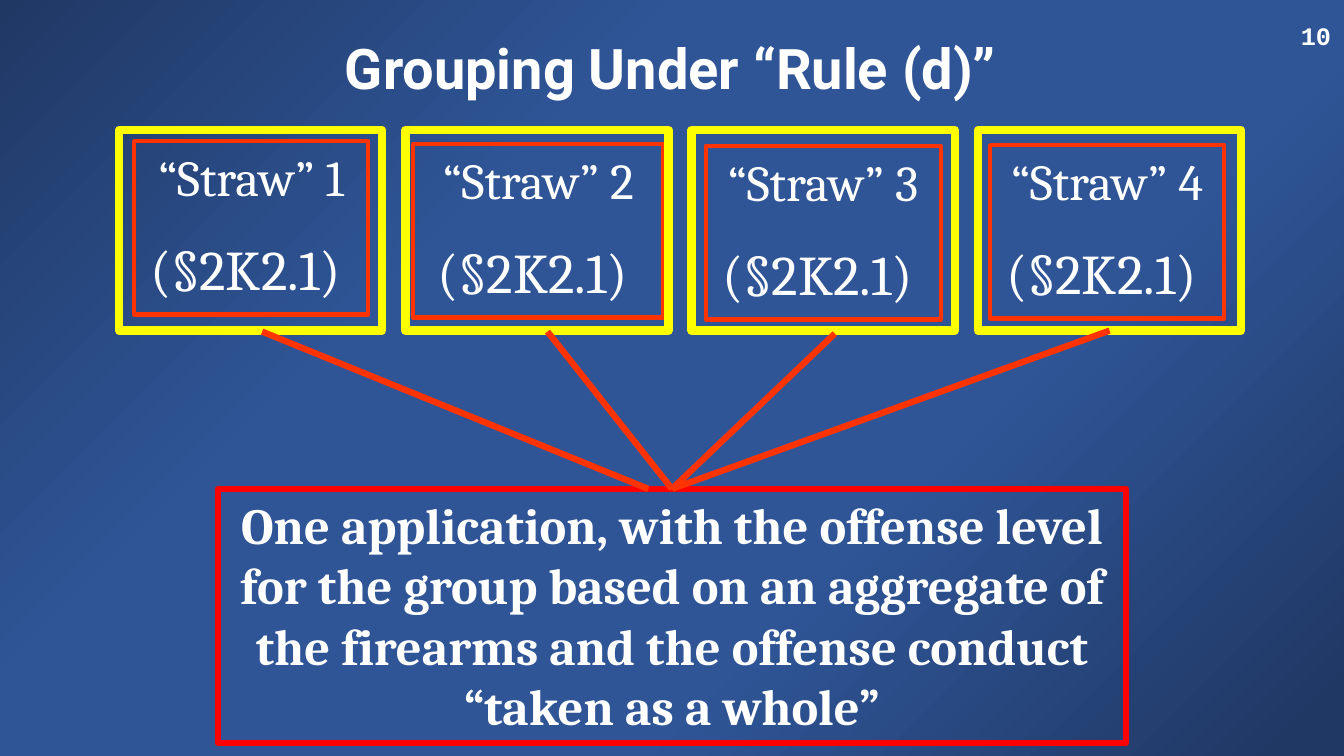
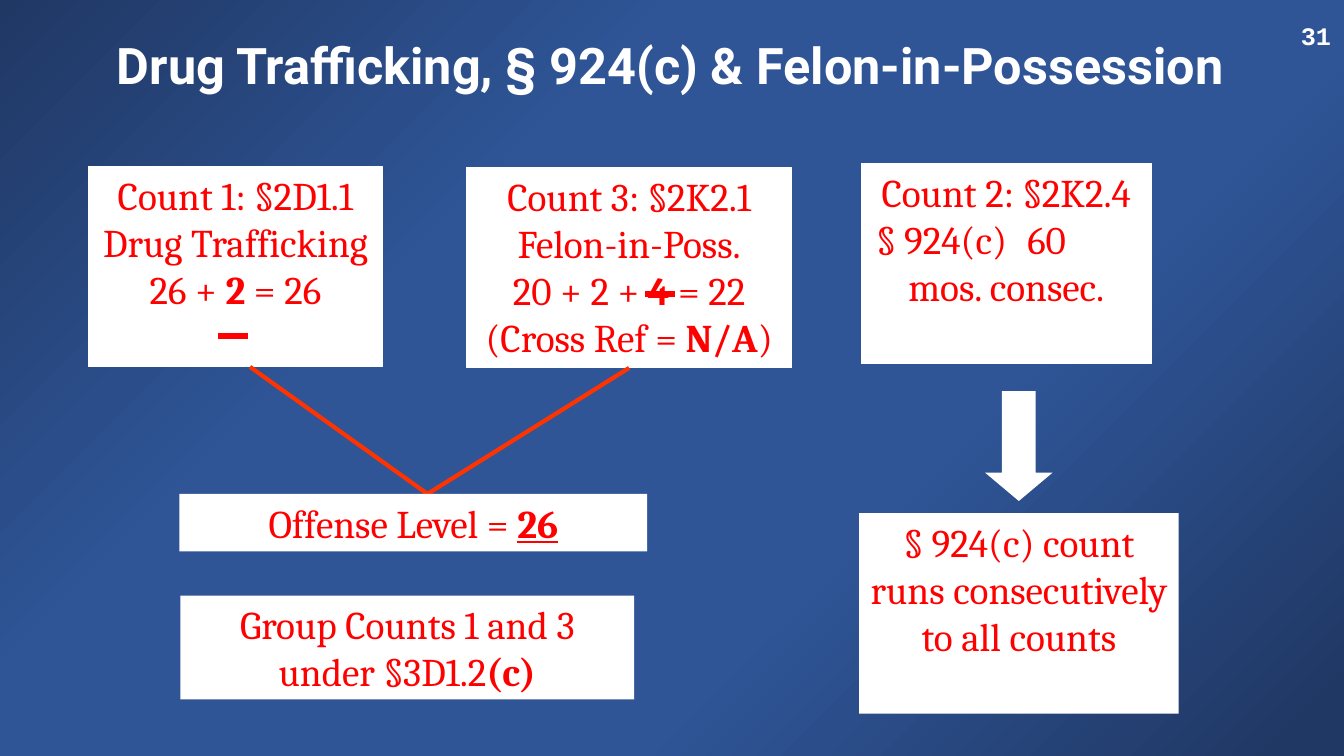
from copy import deepcopy
from dataclasses import dataclass

from lxml import etree
from pptx import Presentation
from pptx import util as u
from pptx.dml.color import RGBColor
from pptx.enum import shapes, text
from pptx.oxml.ns import qn

LEFT, CENTER, RIGHT = text.PP_ALIGN.LEFT, text.PP_ALIGN.CENTER, text.PP_ALIGN.RIGHT
RECT = shapes.MSO_SHAPE.RECTANGLE
TOP, BOTTOM = 0, 2


@dataclass(frozen=True)
class Theme:
    white: RGBColor = RGBColor(0xFF, 0xFF, 0xFF)
    red: RGBColor = RGBColor(0xFF, 0x00, 0x00)
    orange: RGBColor = RGBColor(0xFF, 0x33, 0x00)
    yellow: RGBColor = RGBColor(0xFF, 0xFF, 0x00)
    backdrop: tuple = ((0, "203864"), (33, "2F5597"), (66, "2F5597"), (97, "203864"))
    title_font: str = "Roboto"
    body_font: str = "Cambria"
    number_font: str = "Courier New"
    title: int = 40
    long_title: int = 36
    large: int = 40
    body: int = 36
    small: int = 28
    number: int = 18
    thin: float = 0.75
    medium: float = 3
    thick: float = 4.5
    frame: float = 6


T = Theme()


def set_backdrop(master):
    fill = master.background.fill
    fill.gradient()
    fill.gradient_angle = 315
    stops = fill.gradient_stops
    gs_list = master.element.find(".//" + qn("a:gsLst"))
    template = deepcopy(gs_list[0])
    for gs in list(gs_list):
        gs_list.remove(gs)
    for pos, color in T.backdrop:
        gs = deepcopy(template)
        for child in list(gs):
            gs.remove(child)
        gs.set("pos", str(pos * 1000))
        etree.SubElement(gs, qn("a:srgbClr"), val=color)
        gs_list.append(gs)


def inches(*lengths):
    return [u.Inches(n) for n in lengths]


def add_run(p, words, size, color, font=T.body_font, bold=False, underline=False):
    r = p.add_run()
    r.text = words
    r.font.name, r.font.size, r.font.color.rgb = font, u.Pt(size), color
    r.font.bold = bold
    if underline:
        r.font.underline = True


def add_lines(tf, lines, size, color):
    """Each line is a list of runs; a run is (words, options of add_run)."""
    tf.word_wrap = True
    tf.vertical_anchor = text.MSO_ANCHOR.TOP
    for i, line in enumerate(lines):
        p = tf.paragraphs[0] if i == 0 else tf.add_paragraph()
        p.alignment = CENTER
        for words, options in line:
            add_run(p, words, **{"size": size, "color": color, **options})


def add_box(s, box, fill=None, line=None, width=T.thin, kind=RECT):
    sp = s.shapes.add_shape(kind, *inches(*box))
    sp.shadow.inherit = False
    if fill is None:
        sp.fill.background()
    else:
        sp.fill.solid()
        sp.fill.fore_color.rgb = fill
    if line is None:
        sp.line.fill.background()
    else:
        sp.line.color.rgb, sp.line.width = line, u.Pt(width)
    return sp


def add_line(s, start, end, color, width):
    """An end is either a point (x, y) or a join (shape, side)."""
    points = [(0, 0) if hasattr(e[0], "shape_id") else e for e in (start, end)]
    c = s.shapes.add_connector(shapes.MSO_CONNECTOR.STRAIGHT,
                               *inches(*points[0], *points[1]))
    for e, join in ((start, c.begin_connect), (end, c.end_connect)):
        if hasattr(e[0], "shape_id"):
            join(*e)
    c.line.color.rgb, c.line.width = color, u.Pt(width)
    etree.SubElement(c.line._get_or_add_ln().getparent(), qn("a:effectLst"))


def add_slide(prs, title, number, box, size, spacing):
    s = prs.slides.add_slide(prs.slide_layouts[5])
    sp = s.shapes.title
    sp.left, sp.top, sp.width, sp.height = inches(*box)
    tf = sp.text_frame
    tf.auto_size = text.MSO_AUTO_SIZE.NONE
    tf.vertical_anchor = text.MSO_ANCHOR.TOP
    p = tf.paragraphs[0]
    p.alignment, p.line_spacing = CENTER, spacing
    add_run(p, title, size, T.white, T.title_font, bold=True)

    tf = s.shapes.add_textbox(*inches(10.3, 0.15, 3, 0.4)).text_frame
    tf.word_wrap = True
    tf.vertical_anchor = text.MSO_ANCHOR.MIDDLE
    p = tf.paragraphs[0]
    p.alignment = RIGHT
    add_run(p, number, T.number, T.white, T.number_font, bold=True)
    return s


def straw_card(s, box, number, inset, drop, inner_width):
    """A yellow frame around an orange box of text; returns the frame."""
    x, y, _, _ = box
    sp = add_box(s, (x + inset, y + drop, inner_width, 1.72), line=T.orange, width=T.medium)
    add_lines(sp.text_frame, [[(f"“Straw” {number}", {})],
                              [("(§2K2.1)", {"size": T.large}), (" ", {})]],
              T.body, T.white)
    sp.text_frame.paragraphs[1].space_before = u.Pt(T.large / 2)
    return add_box(s, box, line=T.yellow, width=T.frame)


def white_box(s, box, lines, outline=None):
    sp = add_box(s, box, fill=T.white, line=outline)
    add_lines(sp.text_frame, lines, T.small, T.red)
    return sp


def split_line(p, indent, tab):
    """Set a line with its first part at the left and its last at the right."""
    p.alignment = LEFT
    pPr = p._p.get_or_add_pPr()
    pPr.set("marL", str(u.Inches(indent)))
    pPr.set("indent", "0")
    tabs = etree.SubElement(pPr, qn("a:tabLst"))
    etree.SubElement(tabs, qn("a:tab"), pos=str(u.Inches(tab)), algn="r")


def grouping_slide(prs):
    s = add_slide(prs, "Grouping Under “Rule (d)”", "10",
                  (0, 0.36, 13.3, 0.79), T.title, 0.9)
    left, top, pitch = 1.18, 1.29, 2.84
    insets = [(0.15, 0.11, 2.32), (0.08, 0.14, 2.48), (0.14, 0.16, 2.33), (0.12, 0.15, 2.32)]
    frames = [straw_card(s, (left + i * pitch, top, 2.61, 1.99), i + 1, *inset)
              for i, inset in enumerate(insets)]

    result = add_box(s, (2.16, 4.85, 9.01, 2.52), line=T.red, width=T.thick)
    add_lines(result.text_frame, [[(
        "One application, with the offense level for the group based on an aggregate "
        "of the firearms and the offense conduct “taken as a whole”", {"bold": True})]],
        T.body, T.white)

    join = (result, TOP)
    for start, end in [((2.6, 3.29), (6.43, 4.85)), ((5.43, 3.29), join),
                       ((8.28, 3.31), join), ((frames[3], BOTTOM), join)]:
        add_line(s, start, end, T.orange, T.thick)


def grouped_counts(s, x, y):
    """Counts 1 and 3, leading to one offense level."""
    bold = {"bold": True}
    level_point = (x + 3.36, y + 3.25)
    white_box(s, (x, y, 2.91, 1.99), [
        [("Count 1: §2D1.1", {})],
        [("Drug Trafficking", {})],
        [("26 + ", {}), ("2 ", bold), ("= 26", {})]], T.white)
    count_3 = white_box(s, (x + 3.75, y + 0.01, 3.22, 1.99), [
        [("Count 3: §2K2.1", {})],
        [("Felon-in-Poss.", {})],
        [("20 + 2 + ", {}), ("4 ", bold), ("= 22", {})],
        [("(Cross Ref = ", {}), ("N/A", bold), (")", {})]], T.white)
    add_line(s, (x + 1.6, y + 1.99), level_point, T.orange, T.medium)
    add_line(s, (count_3, BOTTOM), level_point, T.orange, T.medium)
    white_box(s, (x + 0.9, y + 3.25, 4.64, 0.57), [
        [("Offense Level = ", {}), ("26", {"bold": True, "underline": True})]])
    white_box(s, (x + 0.91, y + 4.26, 4.5, 1.03), [
        [("Group Counts 1 and 3 under §3D1.2", {}), ("(c)", bold)]])
    for dx, dy in [(5.52, 1.27), (1.28, 1.68)]:
        add_line(s, (x + dx, y + dy), (x + dx + 0.3, y + dy), T.red, T.thick)


def consecutive_count(s, x, y):
    """Count 2, with an arrow down to its effect."""
    sp = white_box(s, (x, y, 2.88, 1.99), [
        [("Count 2: §2K2.4", {})],
        [("§ 924(c)\t60", {})],
        [("mos. consec.", {})]], T.white)
    split_line(sp.text_frame.paragraphs[1], 0.05, 2.65)
    arrow = add_box(s, (x + 1.23, y + 2.26, 0.67, 1.09), fill=T.white,
                    kind=shapes.MSO_SHAPE.DOWN_ARROW)
    arrow.adjustments[0], arrow.adjustments[1] = 0.5, 0.42
    white_box(s, (x - 0.02, y + 3.47, 3.17, 1.99),
              [[("§ 924(c) count runs consecutively to all counts", {})]])


def counts_slide(prs):
    s = add_slide(prs, "Drug Trafficking, § 924(c) & Felon-in-Possession", "31",
                  (0, 0.33, 13.3, 0.86), T.long_title, 0.95)
    grouped_counts(s, 0.88, 1.65)
    consecutive_count(s, 8.54, 1.62)


def main():
    prs = Presentation()
    prs.slide_width, prs.slide_height = inches(13.33, 7.5)
    set_backdrop(prs.slide_master)
    grouping_slide(prs)
    counts_slide(prs)
    prs.save("out.pptx")


if __name__ == "__main__":
    main()
